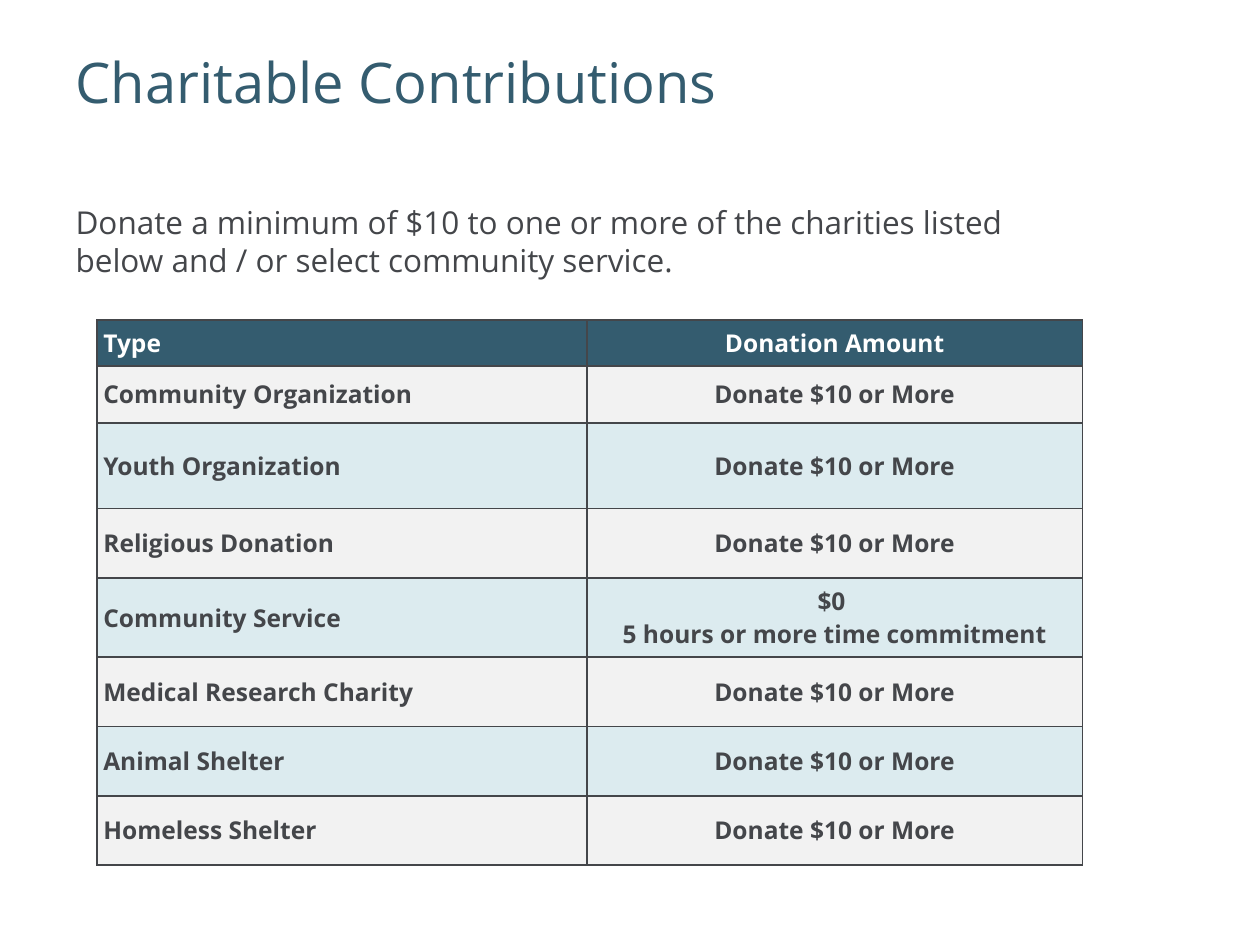
from dataclasses import dataclass

from lxml.etree import SubElement
from pptx import Presentation
from pptx.dml.color import RGBColor
from pptx.enum.text import MSO_ANCHOR, MSO_AUTO_SIZE, PP_ALIGN
from pptx.oxml.ns import qn
from pptx.util import Inches, Pt


@dataclass(frozen=True)
class Theme:
    """Colours, font and type sizes of the slide."""
    font: str = "Open Sans"
    teal: str = "345C6F"
    ink: str = "44464A"
    white: str = "FFFFFF"
    bands: tuple = ("F2F2F2", "DCEBEF")
    title: int = 32
    body: int = 18
    cell: int = 14
    border: int = 1


THEME = Theme()
DONATE = "Donate $10 or More"
ROWS = [
    ("Type", "Donation Amount", 0.34),
    ("Community Organization", DONATE, 0.45),
    ("Youth Organization", DONATE, 0.68),
    ("Religious Donation", DONATE, 0.55),
    ("Community Service", "$0 \n5 hours or more time commitment", 0.55),
    ("Medical Research Charity", DONATE, 0.55),
    ("Animal Shelter", DONATE, 0.55),
    ("Homeless Shelter", DONATE, 0.55),
]
COLUMN_SHARES = (0.4974, 0.5026)
MARGINS = ("margin_left", "margin_top", "margin_right", "margin_bottom")


def set_attrs(target, values):
    """Set each named attribute on the target."""
    for name, value in values.items():
        setattr(target, name, value)


def write(tf, text, size, color, bold=False, **paragraph_format):
    """Fill a text frame with styled paragraphs."""
    tf.text = text
    for p in tf.paragraphs:
        set_attrs(p, paragraph_format)
        for r in p.runs:
            set_attrs(r.font, {"name": THEME.font, "size": Pt(size), "bold": bold})
            r.font.color.rgb = RGBColor.from_string(color)


def place_text(sp, box, anchor):
    """Move a text shape to its box and set up its frame."""
    set_attrs(sp, dict(zip(("left", "top", "width", "height"), map(Inches, box))))
    frame_format = dict.fromkeys(MARGINS, 0)
    frame_format.update(word_wrap=True, auto_size=MSO_AUTO_SIZE.NONE,
                        vertical_anchor=anchor)
    set_attrs(sp.text_frame, frame_format)
    return sp.text_frame


def add_title(s, box):
    """Place the slide title."""
    tf = place_text(s.shapes.title, box, MSO_ANCHOR.TOP)
    write(tf, "Charitable Contributions", THEME.title, THEME.teal,
          alignment=PP_ALIGN.LEFT, line_spacing=1.05)


def add_intro(s, box):
    """Place the introductory sentence."""
    sp = s.shapes.add_textbox(*map(Inches, box))
    tf = place_text(sp, box, MSO_ANCHOR.MIDDLE)
    write(tf, "Donate a minimum of $10 to one or more of the charities listed "
              "below and / or select community service.",
          THEME.body, THEME.ink, space_after=Pt(12))


def style_cell(cell, fill):
    """Give a cell its margins, borders and fill."""
    set_attrs(cell, dict.fromkeys(MARGINS, Inches(0.05)))
    cell.vertical_anchor = MSO_ANCHOR.MIDDLE
    tc_pr = cell._tc.get_or_add_tcPr()
    for side in ("a:lnL", "a:lnR", "a:lnT", "a:lnB"):
        ln = SubElement(tc_pr, qn(side), w=str(Pt(THEME.border)))
        SubElement(SubElement(ln, qn("a:solidFill")), qn("a:srgbClr"), val=THEME.ink)
    cell.fill.solid()
    cell.fill.fore_color.rgb = RGBColor.from_string(fill)


def add_donation_table(s, box):
    """Place the table of charities and donation amounts."""
    frame = s.shapes.add_table(len(ROWS), len(COLUMN_SHARES), *map(Inches, box))
    table = frame.table
    for column, share in zip(table.columns, COLUMN_SHARES):
        column.width = Inches(box[2] * share)
    for i, (charity, amount, height) in enumerate(ROWS):
        table.rows[i].height = Inches(height)
        fill = THEME.bands[(i - 1) % 2] if i else THEME.teal
        color = THEME.ink if i else THEME.white
        for j, (text, align) in enumerate(((charity, PP_ALIGN.LEFT),
                                           (amount, PP_ALIGN.CENTER))):
            cell = table.cell(i, j)
            style_cell(cell, fill)
            write(cell.text_frame, text, THEME.cell, color, True, alignment=align)


def main():
    """Build and save the slide."""
    prs = Presentation()
    set_attrs(prs, {"slide_width": Inches(10), "slide_height": Inches(7.5)})
    s = prs.slides.add_slide(prs.slide_layouts[5])
    add_title(s, (0.6, 0.35, 9, 1.25))
    add_intro(s, (0.6, 1.44, 7.46, 0.94))
    add_donation_table(s, (0.77, 2.54, 7.82, 4.25))
    prs.save("out.pptx")


if __name__ == "__main__":
    main()
